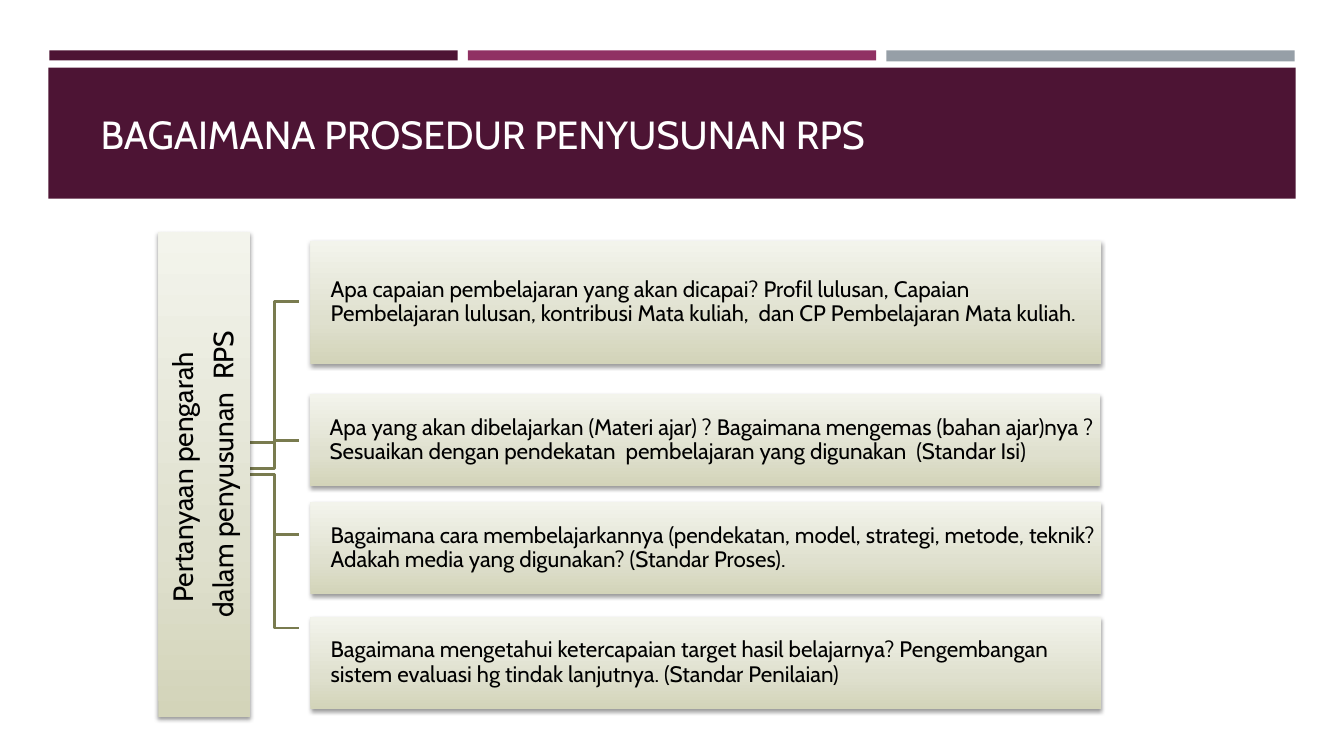
from dataclasses import dataclass

from lxml.etree import SubElement as Sub
from pptx import Presentation
from pptx.dml.color import RGBColor as RGB
from pptx.enum.shapes import MSO_SHAPE as Kind
from pptx.enum.text import MSO_ANCHOR as Anchor, PP_ALIGN as Align
from pptx.oxml.ns import qn
from pptx.shapes.autoshape import Shape
from pptx.slide import Slide
from pptx.util import Inches, Pt


@dataclass(frozen=True)
class Theme:
    """Colours, font and type sizes."""
    font: str = "Cabin"
    plum: str = "4D1434"
    rose: str = "903163"
    grey: str = "969FA7"
    olive: str = "797B4F"
    black: str = "000000"
    white: str = "FFFFFF"
    fade: tuple[tuple[int, str], ...] = ((0, "D3D4B9"), (35, "DFE0CE"), (100, "F3F4EC"))
    head: int = 28
    side: int = 20
    body: int = 16


@dataclass(frozen=True)
class Box:
    """Place of a shape in inches."""
    left: float
    top: float
    width: float
    height: float


@dataclass(frozen=True)
class Card:
    """A guiding question and its place."""
    box: Box
    text: str


@dataclass(frozen=True)
class Elbow:
    """A stepped line from the side panel to a card."""
    start: float
    end: float


THEME = Theme()
TITLE = "BAGAIMANA PROSEDUR PENYUSUNAN RPS"
SIDE = Card(Box(1.57, 2.3, 0.91, 4.81), "Pertanyaan pengarah \ndalam penyusunan  RPS")
BANDS = (
    (Box(0.49, 0.5, 4.05, 0.1), THEME.plum),
    (Box(4.64, 0.5, 4.05, 0.1), THEME.rose),
    (Box(8.79, 0.5, 4.05, 0.11), THEME.grey),
    (Box(0.48, 0.67, 12.37, 1.3), THEME.plum),
)
ELBOWS = (Elbow(4.71, 6.23), Elbow(4.71, 5.3), Elbow(4.65, 4.37), Elbow(4.39, 2.99))
CARDS = (
    Card(Box(3.08, 2.39, 7.84, 1.22),
         "Apa capaian pembelajaran yang akan dicapai? Profil lulusan, Capaian "
         "Pembelajaran lulusan, kontribusi Mata kuliah,  dan CP Pembelajaran Mata kuliah."),
    Card(Box(3.07, 3.91, 7.84, 0.91),
         "Apa yang akan dibelajarkan (Materi ajar) ? Bagaimana mengemas (bahan ajar)nya ? "
         "Sesuaikan dengan pendekatan  pembelajaran yang digunakan  (Standar Isi)"),
    Card(Box(3.08, 4.98, 7.84, 0.91),
         "Bagaimana cara membelajarkannya (pendekatan, model, strategi, metode, teknik? "
         "Adakah media yang digunakan? (Standar Proses)."),
    Card(Box(3.08, 6.12, 7.84, 0.91),
         "Bagaimana mengetahui ketercapaian target hasil belajarnya? Pengembangan "
         "sistem evaluasi hg tindak lanjutnya. (Standar Penilaian)"),
)


def place(box: Box) -> tuple[Inches, ...]:
    """Turn a box into lengths."""
    return tuple(map(Inches, (box.left, box.top, box.width, box.height)))


def block(slide: Slide, box: Box) -> Shape:
    """Add a rectangle without line or shadow."""
    shape = slide.shapes.add_shape(Kind.RECTANGLE, *place(box))
    shape.shadow.inherit = False
    shape.line.fill.background()
    return shape


def style(shape: Shape, size: int, tint: str) -> None:
    """Set the font of every run."""
    for para in shape.text_frame.paragraphs:
        for run in para.runs:
            run.font.name = THEME.font
            run.font.size = Pt(size)
            run.font.color.rgb = RGB.from_string(tint)


def blend(shape: Shape) -> None:
    """Fill with the olive fade and cast a soft shadow."""
    shape.fill.gradient()
    shape.fill.gradient_angle = 90
    props = shape._element.spPr
    stops = props.find(".//" + qn("a:gsLst"))
    for old in list(stops):
        stops.remove(old)
    for spot, tint in THEME.fade:
        stop = Sub(stops, qn("a:gs"), pos=str(spot * 1000))
        Sub(stop, qn("a:srgbClr"), val=tint)
    cast = Sub(props.find(qn("a:effectLst")), qn("a:outerShdw"), blurRad=str(Pt(3.1)),
               dist=str(Pt(1.6)), dir="5400000", rotWithShape="0")
    shade = Sub(cast, qn("a:srgbClr"), val=THEME.black)
    Sub(shade, qn("a:alpha"), val="38000")


def panel(slide: Slide, card: Card, size: int, align: Align, inset: float) -> Shape:
    """Add a shaded panel with its text."""
    shape = block(slide, card.box)
    blend(shape)
    frame = shape.text_frame
    frame.text = card.text
    frame.word_wrap = True
    frame.vertical_anchor = Anchor.MIDDLE
    frame.margin_left = frame.margin_right = Inches(0.01)
    frame.margin_top = frame.margin_bottom = Inches(0.01)
    for para in frame.paragraphs:
        para.alignment = align
        para.line_spacing = 0.9
        para.space_after = Pt(size * 0.35)
        props = para._p.get_or_add_pPr()
        props.set("marL", str(Inches(inset)))
        props.set("indent", "0")
    style(shape, size, THEME.black)
    return shape


def link(slide: Slide, elbow: Elbow) -> None:
    """Draw a stepped line."""
    left, mid, right = map(Inches, (2.48, 2.72, 2.97))
    start, end = Inches(elbow.start), Inches(elbow.end)
    path = slide.shapes.build_freeform(left, start)
    path.add_line_segments([(mid, start), (mid, end), (right, end)], close=False)
    shape = path.convert_to_shape()
    shape.shadow.inherit = False
    shape.fill.background()
    shape.line.color.rgb = RGB.from_string(THEME.olive)
    shape.line.width = Pt(2)


def title(slide: Slide) -> None:
    """Write the slide title."""
    shape = slide.shapes.add_textbox(*place(Box(0.9, 0.91, 12.06, 0.7)))
    frame = shape.text_frame
    frame.text = TITLE
    frame.word_wrap = True
    frame.vertical_anchor = Anchor.BOTTOM
    style(shape, THEME.head, THEME.white)


def main() -> None:
    """Build and save the slide."""
    deck = Presentation()
    deck.slide_width, deck.slide_height = Inches(13.33), Inches(7.5)
    slide = deck.slides.add_slide(deck.slide_layouts[6])
    for box, tint in BANDS:
        band = block(slide, box)
        band.fill.solid()
        band.fill.fore_color.rgb = RGB.from_string(tint)
    title(slide)
    for elbow in ELBOWS:
        link(slide, elbow)
    side = panel(slide, SIDE, THEME.side, Align.CENTER, 0)
    side.text_frame._txBody.bodyPr.set("vert", "vert270")
    for card in CARDS:
        panel(slide, card, THEME.body, Align.LEFT, 0.19)
    deck.save("out.pptx")


if __name__ == "__main__":
    main()
